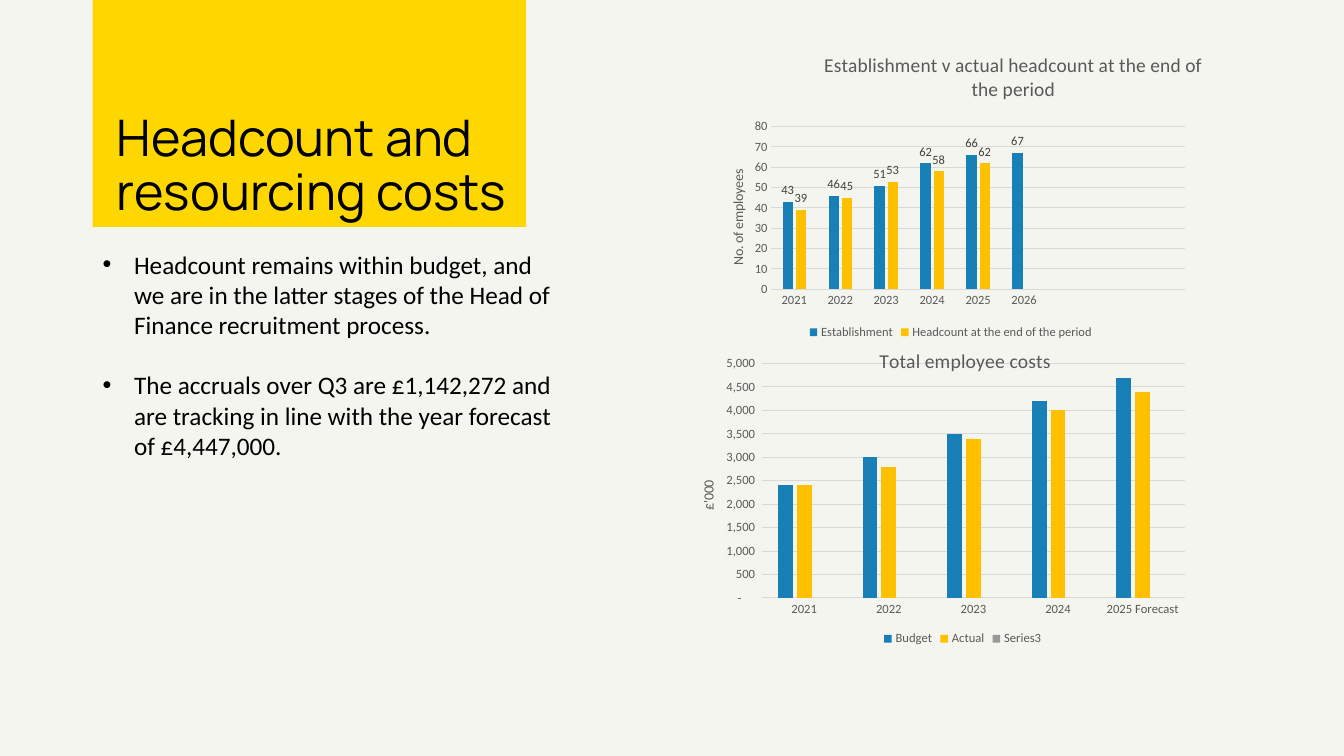
import pptx
import pptx.util
import pptx.chart.data
import pptx.dml.color
import pptx.enum.chart
import pptx.enum.shapes
import pptx.enum.text
import pptx.oxml
import pptx.oxml.ns
from pptx.util import Pt

BLUE, AMBER, GREY = "1980B7", "FFC000", "999999"
TEXT_GREY, GRID_GREY = "595959", "D9D9D9"
QN = pptx.oxml.ns.qn


def color(value):
    return pptx.dml.color.RGBColor.from_string(value)


def style_font(font, size, value, name="Calibri"):
    font.size = Pt(size)
    font.name = name
    font.bold = False
    font.color.rgb = color(value)


def add_title(page, left, top, width, height, lines):
    box = page.shapes.add_shape(pptx.enum.shapes.MSO_SHAPE.RECTANGLE,
                                Pt(left), Pt(top), Pt(width), Pt(height))
    box.shadow.inherit = False
    box.fill.solid()
    box.fill.fore_color.rgb = color("FFD700")
    box.line.fill.background()
    frame = box.text_frame
    frame.word_wrap = True
    frame.vertical_anchor = pptx.enum.text.MSO_ANCHOR.BOTTOM
    frame.margin_left = Pt(17.3)
    para = frame.paragraphs[0]
    para.alignment = pptx.enum.text.PP_ALIGN.LEFT
    para.line_spacing = 0.9
    for index, line in enumerate(lines):
        if index:
            para.add_line_break()
        span = para.add_run()
        span.text = line
        style_font(span.font, 36, "000000", "Manrope")


def add_bullets(page, left, top, width, height, items):
    box = page.shapes.add_textbox(Pt(left), Pt(top), Pt(width), Pt(height))
    frame = box.text_frame
    frame.word_wrap = True
    for index, item in enumerate(items):
        para = frame.add_paragraph() if index else frame.paragraphs[0]
        properties = para._p.get_or_add_pPr()
        properties.set("marL", str(Pt(22.5)))
        properties.set("indent", str(-Pt(22.5)))
        properties.append(pptx.oxml.parse_xml(
            f'<a:buFont {pptx.oxml.ns.nsdecls("a")} typeface="Arial"/>'))
        properties.append(pptx.oxml.parse_xml(
            f'<a:buChar {pptx.oxml.ns.nsdecls("a")} char="•"/>'))
        if index:
            para.space_before = Pt(21.6)
        span = para.add_run()
        span.text = item
        style_font(span.font, 18, "000000")


def place(element, position, inner=False):
    """Set a manual layout, in fractions of the chart's size."""
    for old in element.findall(QN("c:layout")):
        element.remove(old)
    target = '<c:layoutTarget val="inner"/>' if inner else ""
    modes = "".join(f'<c:{axis}Mode val="edge"/>' for axis in "xy")
    values = "".join(f'<c:{key} val="{value}"/>'
                     for key, value in zip("xywh", position))
    layout = pptx.oxml.parse_xml(
        f'<c:layout {pptx.oxml.ns.nsdecls("c")}><c:manualLayout>'
        f'{target}{modes}{values}</c:manualLayout></c:layout>')
    text = element.find(QN("c:tx"))
    if text is None:
        element.insert(0, layout)
    else:
        text.addnext(layout)


def set_heading(heading, lines, size, position):
    para = heading.text_frame.paragraphs[0]
    for index, line in enumerate(lines):
        if index:
            para.add_line_break()
        span = para.add_run()
        span.text = line
        style_font(span.font, size, TEXT_GREY)
    place(heading._element, position)


def style_axis(axis):
    axis.major_tick_mark = pptx.enum.chart.XL_TICK_MARK.NONE
    axis.minor_tick_mark = pptx.enum.chart.XL_TICK_MARK.NONE
    style_font(axis.tick_labels.font, 9, TEXT_GREY)


def style_line(line):
    line.color.rgb = color(GRID_GREY)
    line.width = Pt(0.75)


def add_columns(page, frame, categories, series, title, title_at, axis_title,
                axis_title_at, plot_at, top_value, step, number_format, labels):
    data = pptx.chart.data.CategoryChartData()
    data.categories = categories
    for name, values, _ in series:
        data.add_series(name, values)
    chart = page.shapes.add_chart(
        pptx.enum.chart.XL_CHART_TYPE.COLUMN_CLUSTERED,
        *(Pt(length) for length in frame), data).chart
    style_font(chart.font, 10, "000000")
    chart.has_title = True
    set_heading(chart.chart_title, title, 14, title_at)
    place(chart._chartSpace.chart.plotArea, plot_at, inner=True)

    # Axes
    style_axis(chart.category_axis)
    style_line(chart.category_axis.format.line)
    value_axis = chart.value_axis
    style_axis(value_axis)
    value_axis.format.line.fill.background()
    value_axis.minimum_scale = 0
    value_axis.maximum_scale = top_value
    value_axis.major_unit = step
    value_axis.has_major_gridlines = True
    style_line(value_axis.major_gridlines.format.line)
    value_axis.tick_labels.number_format = number_format
    value_axis.tick_labels.number_format_is_linked = False
    value_axis.has_title = True
    set_heading(value_axis.axis_title, [axis_title], 10, axis_title_at)

    # Legend
    chart.has_legend = True
    chart.legend.position = pptx.enum.chart.XL_LEGEND_POSITION.BOTTOM
    chart.legend.include_in_layout = False
    style_font(chart.legend.font, 9, TEXT_GREY)

    # Columns
    plot = chart.plots[0]
    plot.vary_by_categories = False
    plot.gap_width = 219
    plot.overlap = -27
    for columns, (_, _, fill) in zip(plot.series, series):
        columns.format.fill.solid()
        columns.format.fill.fore_color.rgb = color(fill)
        if labels:
            columns.data_labels.show_value = True
            columns.data_labels.position = (
                pptx.enum.chart.XL_LABEL_POSITION.OUTSIDE_END)
            style_font(columns.data_labels.font, 9, "404040")


def main():
    deck = pptx.Presentation()
    deck.slide_width, deck.slide_height = Pt(960), Pt(540)
    page = deck.slides.add_slide(deck.slide_layouts[6])
    page.background.fill.solid()
    page.background.fill.fore_color.rgb = color("F5F5EF")

    # Text column
    add_title(page, 66.2, 0, 309.6, 162, ["Headcount and", "resourcing costs"])
    add_bullets(page, 66.2, 174.2, 338.4, 159.8, [
        "Headcount remains within budget, and we are in the latter stages of "
        "the Head of Finance recruitment process.",
        "The accruals over Q3 are £1,142,272 and are tracking in line with "
        "the year forecast of £4,447,000."])

    # Employee costs
    add_columns(
        page, (493.9, 231.8, 387.4, 232.6),
        ["2021", "2022", "2023", "2024", "2025 Forecast"],
        [("Budget", [2400, 3000, 3500, 4200, 4700], BLUE),
         ("Actual", [2400, 2800, 3400, 4000, 4400], AMBER),
         ("Series3", [None] * 5, GREY)],
        ["Total employee costs"], (0.34, 0.06), "£'000", (0.01, 0.47),
        (0.13, 0.12, 0.78, 0.72), 5000, 500,
        '_(* #,##0_);_(* \\(#,##0\\);_(* "-"??_);_(@_)', False)

    # Headcount
    add_columns(
        page, (501.1, 30.2, 360, 215.3),
        ["2021", "2022", "2023", "2024", "2025", "2026", "", "", ""],
        [("Establishment", [43, 46, 51, 62, 66, 67] + [None] * 3, BLUE),
         ("Headcount at the end of the period",
          [39, 45, 53, 58, 62] + [None] * 4, AMBER)],
        ["Establishment v actual headcount at the end of", "the period"],
        (0.24, 0.02), "No. of employees", (0.05, 0.41),
        (0.14, 0.28, 0.83, 0.54), 80, 10, "General", True)

    deck.save("out.pptx")


if __name__ == "__main__":
    main()
